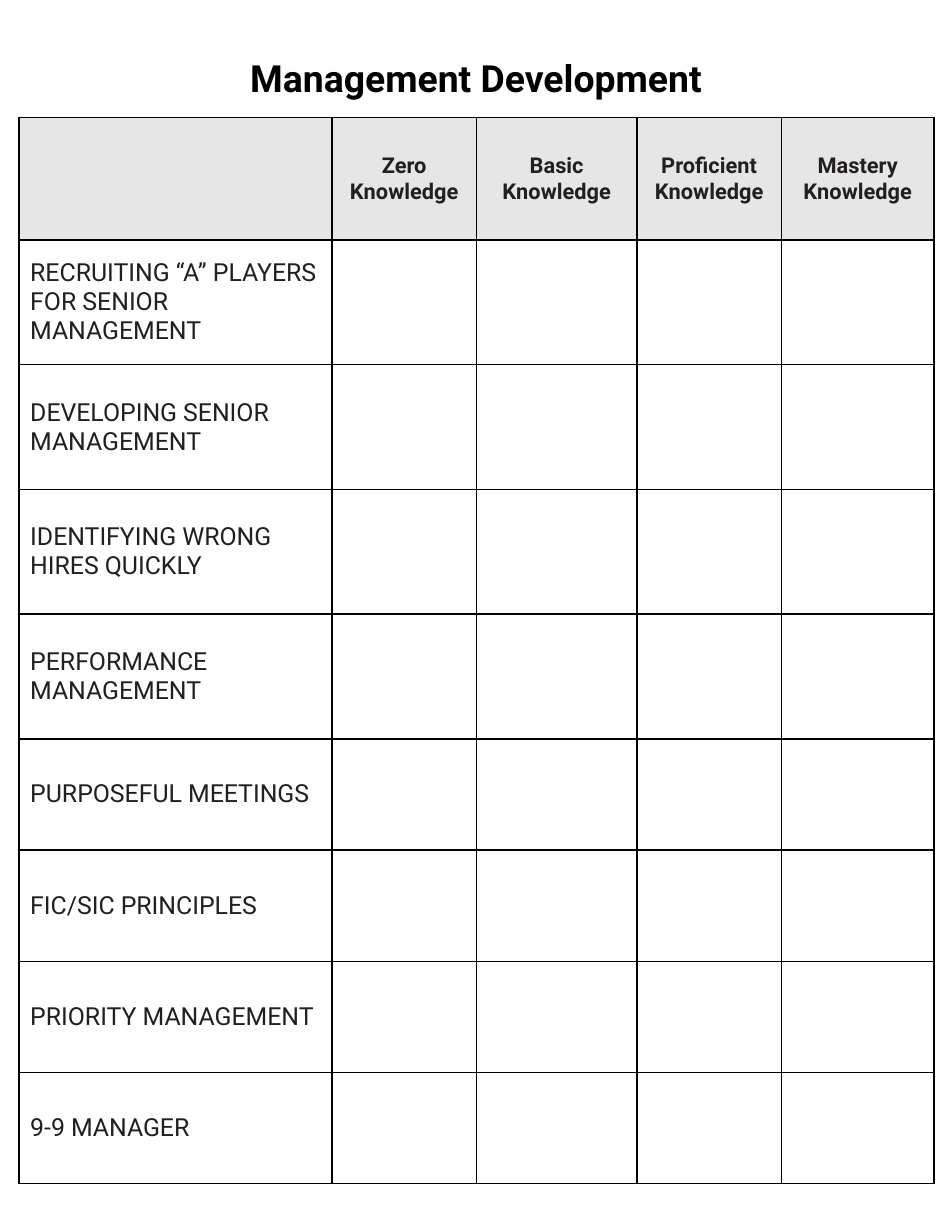
from lxml import etree
from pptx import Presentation
from pptx.dml.color import RGBColor
from pptx.enum.text import MSO_ANCHOR, MSO_AUTO_SIZE, PP_ALIGN
from pptx.oxml.ns import qn
from pptx.util import Inches, Pt

CENTER, LEFT = PP_ALIGN.CENTER, PP_ALIGN.LEFT
MIDDLE = MSO_ANCHOR.MIDDLE
GROW = MSO_AUTO_SIZE.SHAPE_TO_FIT_TEXT
FONT = "Roboto"
COLORS = {"title": "000000", "text": "231F20", "header": "D0CECE", "border": "000000"}

COLUMNS = [2.79, 1.29, 1.43, 1.29, 1.36]
ROWS = [1.09] + [1.11] * 4 + [0.99] * 4
LEVELS = ["Zero", "Basic", "Proficient", "Mastery"]
SKILLS = [
    "RECRUITING “A” PLAYERS FOR SENIOR MANAGEMENT",
    "DEVELOPING SENIOR MANAGEMENT",
    "IDENTIFYING WRONG HIRES QUICKLY",
    "PERFORMANCE MANAGEMENT",
    "PURPOSEFUL MEETINGS",
    "FIC/SIC PRINCIPLES",
    "PRIORITY MANAGEMENT",
    "9-9 MANAGER",
]


def write(tf, text, size, color, bold, align):
    p = tf.paragraphs[0]
    p.alignment = align
    r = p.add_run()
    r.text = text
    r.font.name = FONT
    r.font.size = Pt(size)
    r.font.bold = bold
    r.font.color.rgb = RGBColor.from_string(COLORS[color])


def add_borders(cell, width=1):
    tcPr = cell._tc.get_or_add_tcPr()
    for side in ("lnL", "lnR", "lnT", "lnB"):
        ln = etree.SubElement(tcPr, qn(f"a:{side}"), w=str(Pt(width)))
        fill = etree.SubElement(ln, qn("a:solidFill"))
        etree.SubElement(fill, qn("a:srgbClr"), val=COLORS["border"])


def shade_header(cell):
    cell.fill.solid()
    cell.fill.fore_color.rgb = RGBColor.from_string(COLORS["header"])
    color = cell._tc.tcPr.find(f"{qn('a:solidFill')}/{qn('a:srgbClr')}")
    etree.SubElement(color, qn("a:alpha"), val="50000")


def add_title(s, box):
    sp = s.shapes.add_textbox(*map(Inches, box))
    tf = sp.text_frame
    tf.word_wrap = True
    tf.auto_size = GROW
    write(tf, "Management Development", 24, "title", True, CENTER)


def add_skill_table(s, box):
    table = s.shapes.add_table(len(ROWS), len(COLUMNS), *map(Inches, box)).table
    table.horz_banding = False
    table.first_row = False
    for column, share in zip(table.columns, COLUMNS):
        column.width = Inches(box[2] * share / sum(COLUMNS))
    for row, share in zip(table.rows, ROWS):
        row.height = Inches(box[3] * share / sum(ROWS))

    for i, row in enumerate(table.rows):
        for cell in row.cells:
            cell.vertical_anchor = MIDDLE
            add_borders(cell)
            if i == 0:
                shade_header(cell)
            else:
                cell.fill.background()

    for col, level in enumerate(LEVELS, 1):
        write(table.cell(0, col).text_frame, f"{level} Knowledge", 14, "text", True, CENTER)
    for row, skill in enumerate(SKILLS, 1):
        write(table.cell(row, 0).text_frame, skill, 16, "text", False, LEFT)


def main():
    prs = Presentation()
    prs.slide_width, prs.slide_height = Inches(8.5), Inches(11)
    s = prs.slides.add_slide(prs.slide_layouts[6])
    add_title(s, (1.98, 0.44, 4.54, 0.5))
    add_skill_table(s, (0.17, 1.05, 8.17, 9.52))
    prs.save("out.pptx")


if __name__ == "__main__":
    main()
